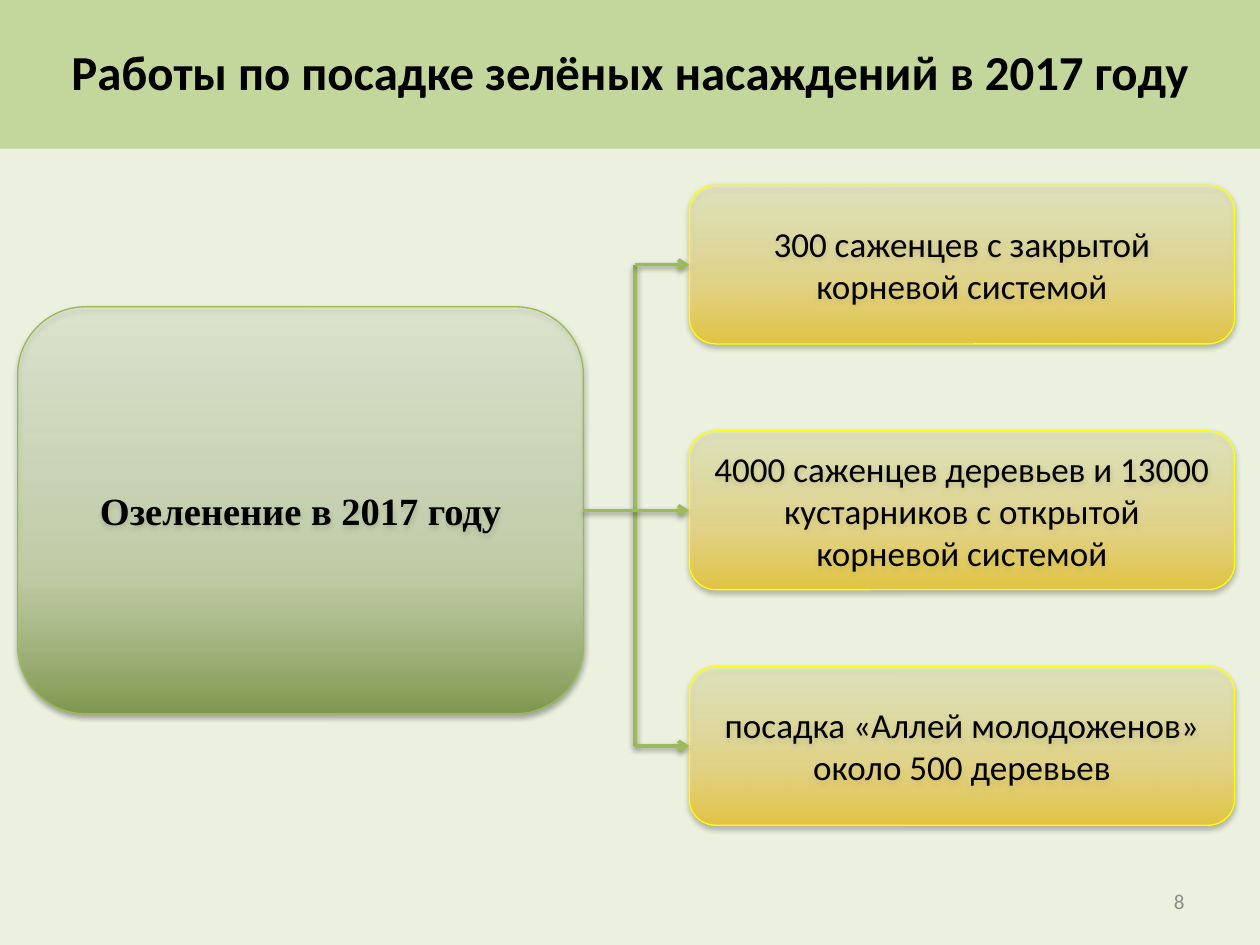
from dataclasses import dataclass

from lxml import etree
from pptx import Presentation
from pptx import util as u
from pptx.dml.color import RGBColor
from pptx.enum import shapes, text
from pptx.oxml import parse_xml
from pptx.oxml.ns import nsdecls, qn


@dataclass(frozen=True)
class Theme:
    background: str = "EBF1DE"
    banner: str = "C3D69B"
    ink: str = "000000"
    muted: str = "8C8C8C"
    arrow: str = "9BBB59"
    topic_line: str = "98B955"
    work_line: str = "FFFF00"
    # Gradient stops from the bottom up: position %, colour, opacity %
    topic_fill: tuple = ((0, "77933C", 80), (35, "C3D69B", 50), (100, "D7E4BD", 15))
    work_fill: tuple = ((0, "FFCC00", 60), (35, "FFE269", 60), (100, "FFFFAB", 30))
    body_font: str = "Calibri"
    topic_font: str = "Times New Roman"
    title_size: float = 27.9
    topic_size: float = 22
    work_size: float = 20
    number_size: float = 12


theme = Theme()


def write(shape, words, size, color=theme.ink, name=theme.body_font, bold=False,
          align=text.PP_ALIGN.CENTER):
    frame = shape.text_frame
    frame.word_wrap = True
    frame.vertical_anchor = text.MSO_ANCHOR.MIDDLE
    paragraph = frame.paragraphs[0]
    paragraph.alignment = align
    run = paragraph.add_run()
    run.text = words
    for key, value in {"size": u.Pt(size), "name": name, "bold": bold}.items():
        setattr(run.font, key, value)
    run.font.color.rgb = RGBColor.from_string(color)


def outline_with_shadow(shape, color, width):
    shape.line.color.rgb = RGBColor.from_string(color)
    shape.line.width = u.Pt(width)
    shape._element.spPr.append(parse_xml(
        f'<a:effectLst {nsdecls("a")}><a:outerShdw blurRad="40000" dist="20000" '
        'dir="5400000" rotWithShape="0"><a:srgbClr val="000000">'
        '<a:alpha val="38000"/></a:srgbClr></a:outerShdw></a:effectLst>'))


deck = Presentation()
deck.slide_width, deck.slide_height = u.Inches(10), u.Inches(7.5)
slide = deck.slides.add_slide(deck.slide_layouts[6])
slide.background.fill.solid()
slide.background.fill.fore_color.rgb = RGBColor.from_string(theme.background)

# Title banner
banner = slide.shapes.add_shape(shapes.MSO_SHAPE.RECTANGLE, 0, 0, u.Inches(10), u.Inches(1.18))
banner.shadow.inherit = False
banner.fill.solid()
banner.fill.fore_color.rgb = RGBColor.from_string(theme.banner)
banner.line.fill.background()
banner.text_frame.margin_bottom = u.Inches(0.1)
write(banner, "Работы по посадке зелёных насаждений в 2017 году", theme.title_size, bold=True)

# Topic on the left, works on the right
middle = 4.05
work_left, work_height = 5.47, 1.26
works = [
    (2.1, "300 саженцев с закрытой корневой системой"),
    (middle, "4000 саженцев деревьев и 13000 кустарников с открытой корневой системой"),
    (5.92, "посадка «Аллей молодоженов» около 500 деревьев"),
]
topic_format = {"size": theme.topic_size, "name": theme.topic_font, "bold": True}
cards = [(0.14, middle, 4.49, 3.23, theme.topic_fill, theme.topic_line,
          "Озеленение в 2017 году", topic_format)]
cards += [(work_left, center, 4.33, work_height, theme.work_fill, theme.work_line,
           words, {"size": theme.work_size}) for center, words in works]

for left, center, width, height, stops, line_color, words, font_format in cards:
    card = slide.shapes.add_shape(
        shapes.MSO_SHAPE.ROUNDED_RECTANGLE, u.Inches(left), u.Inches(center - height / 2),
        u.Inches(width), u.Inches(height))
    card.fill.solid()
    stop_xml = "".join(
        f'<a:gs pos="{position * 1000}"><a:srgbClr val="{color}">'
        f'<a:alpha val="{opacity * 1000}"/></a:srgbClr></a:gs>'
        for position, color, opacity in stops)
    properties = card._element.spPr
    properties.replace(properties.find(qn("a:solidFill")), parse_xml(
        f'<a:gradFill {nsdecls("a")} rotWithShape="1"><a:gsLst>{stop_xml}</a:gsLst>'
        '<a:lin ang="16200000" scaled="0"/></a:gradFill>'))
    outline_with_shadow(card, line_color, 0.75)
    write(card, words, **font_format)

# Trunk and arrows from the topic to each work
trunk, topic_right = 5.04, 4.63
top, bottom = works[0][0], works[-1][0]
links = [(trunk, top, trunk, bottom, False)]
links += [(topic_right if center == middle else trunk, center, work_left, center, True)
          for center, _ in works]

for x1, y1, x2, y2, has_head in links:
    link = slide.shapes.add_connector(
        shapes.MSO_CONNECTOR.STRAIGHT, *(u.Inches(value) for value in (x1, y1, x2, y2)))
    outline_with_shadow(link, theme.arrow, 2)
    if has_head:
        etree.SubElement(link.line._get_or_add_ln(), qn("a:tailEnd"), type="arrow")

# Slide number
number = slide.shapes.add_textbox(u.Inches(7.17), u.Inches(6.95), u.Inches(2.33), u.Inches(0.4))
write(number, "8", theme.number_size, color=theme.muted, align=text.PP_ALIGN.RIGHT)

deck.save("out.pptx")
